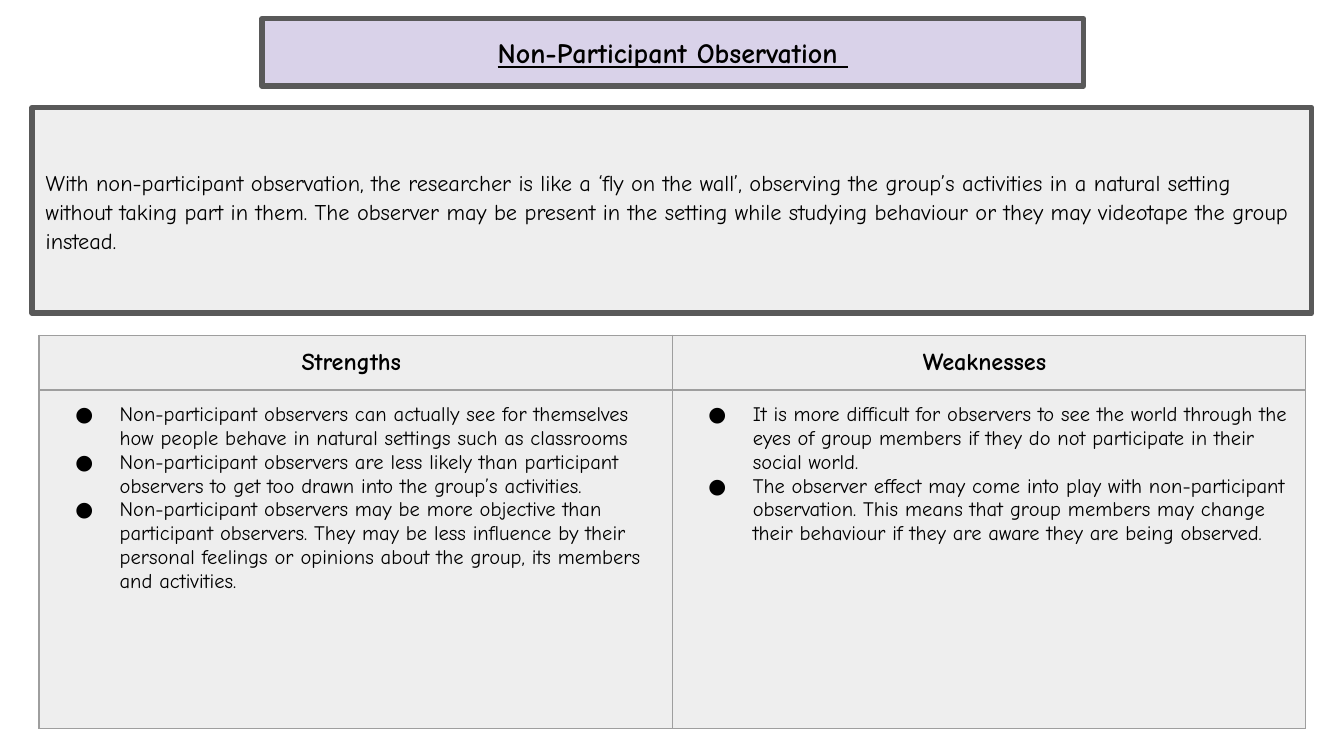
from dataclasses import dataclass

from lxml.etree import SubElement
from pptx import Presentation
from pptx.dml.color import RGBColor
from pptx.enum.text import MSO_ANCHOR, MSO_AUTO_SIZE, PP_ALIGN
from pptx.oxml.ns import qn
from pptx.util import Pt


@dataclass(frozen=True)
class Theme:
    font: str = "Comic Neue"
    ink: str = "000000"
    lilac: str = "D9D2E9"
    pale: str = "EEEEEE"
    frame: str = "595959"
    rule: str = "9E9E9E"
    title: float = 15
    body: float = 12
    head: float = 13
    item: float = 11


THEME = Theme()
INSET = Pt(7.2)
TITLE = "Non-Participant Observation "
BODY = (
    "With non-participant observation, the researcher is like a ‘fly on the wall’, "
    "observing the group’s activities in a natural setting without taking part in them. "
    "The observer may be present in the setting while studying behaviour or they may "
    "videotape the group instead."
)
POINTS = {
    "Strengths ": [
        "Non-participant observers can actually see for themselves how people behave "
        "in natural settings such as classrooms",
        "Non-participant observers are less likely than participant observers to get "
        "too drawn into the group’s activities.",
        "Non-participant observers may be more objective than participant observers. "
        "They may be less influence by their personal feelings or opinions about the "
        "group, its members and activities.",
    ],
    "Weaknesses ": [
        "It is more difficult for observers to see the world through the eyes of group "
        "members if they do not participate in their social world.",
        "The observer effect may come into play with non-participant observation. This "
        "means that group members may change their behaviour if they are aware they are "
        "being observed.",
    ],
}


def apply(target, values):
    for name, value in values.items():
        setattr(target, name, value)


def paint(fill, color):
    fill.solid()
    fill.fore_color.rgb = RGBColor.from_string(color)


def write(para, text, size, bold=False, under=False, **layout):
    apply(para, {"space_before": Pt(0), **layout})
    run = para.add_run()
    run.text = text
    apply(run.font, {"name": THEME.font, "size": Pt(size), "bold": bold, "underline": under})
    run.font.color.rgb = RGBColor.from_string(THEME.ink)


def mark(para, char=None, left=0, hang=0):
    props = para._p.get_or_add_pPr()
    props.set("marL", str(Pt(left)))
    props.set("indent", str(Pt(-hang)))
    if char is None:
        SubElement(props, qn("a:buNone"))
        return
    color = SubElement(props, qn("a:buClr"))
    SubElement(color, qn("a:srgbClr"), val=THEME.ink)
    SubElement(props, qn("a:buFont"), typeface=THEME.font)
    SubElement(props, qn("a:buChar"), char=char)


def panel(shape, box, color):
    apply(shape, dict(zip(("left", "top", "width", "height"), map(Pt, box))))
    paint(shape.fill, color)
    paint(shape.line.fill, THEME.frame)
    shape.line.width = Pt(3)
    SubElement(shape.line._get_or_add_ln(), qn("a:round"))
    frame = shape.text_frame
    apply(frame, {
        "word_wrap": True,
        "auto_size": MSO_AUTO_SIZE.NONE,
        "vertical_anchor": MSO_ANCHOR.MIDDLE,
        "margin_left": INSET,
        "margin_right": INSET,
        "margin_top": INSET,
        "margin_bottom": INSET,
    })
    return frame.paragraphs[0]


def dress(cell):
    apply(cell, {
        "margin_left": INSET,
        "margin_right": INSET,
        "margin_top": INSET,
        "margin_bottom": INSET,
    })
    props = cell._tc.get_or_add_tcPr()
    for side in ("lnL", "lnR", "lnT", "lnB"):
        edge = SubElement(props, qn(f"a:{side}"), w=str(Pt(0.75)))
        fill = SubElement(edge, qn("a:solidFill"))
        SubElement(fill, qn("a:srgbClr"), val=THEME.rule)
    paint(cell.fill, THEME.pale)


def bullets(frame, items):
    for i, text in enumerate(items):
        para = frame.add_paragraph() if i else frame.paragraphs[0]
        write(para, text, THEME.item)
        mark(para, "●", 36, 23.75)


def grid(slide, points):
    table = slide.shapes.add_table(
        2, len(points), Pt(20.9), Pt(179.6), Pt(678.4), Pt(210.2)
    ).table
    apply(table, {"first_row": False, "horz_banding": False})
    for row, height in zip(table.rows, (29, 181.2)):
        row.height = Pt(height)
    for col, (head, items) in enumerate(points.items()):
        top, low = table.cell(0, col), table.cell(1, col)
        dress(top)
        dress(low)
        write(top.text_frame.paragraphs[0], head, THEME.head, bold=True,
              alignment=PP_ALIGN.CENTER)
        bullets(low.text_frame, items)


def main():
    deck = Presentation()
    apply(deck, {"slide_width": Pt(720), "slide_height": Pt(405)})
    slide = deck.slides.add_slide(deck.slide_layouts[1])
    title, body = slide.placeholders
    para = panel(title, (140.4, 10, 440, 36), THEME.lilac)
    write(para, TITLE, THEME.title, bold=True, under=True, alignment=PP_ALIGN.CENTER)
    para = panel(body, (17.3, 57.6, 685.4, 110.2), THEME.pale)
    write(para, BODY, THEME.body, alignment=PP_ALIGN.LEFT, line_spacing=1.08,
          space_after=Pt(8))
    mark(para)
    grid(slide, POINTS)
    deck.save("out.pptx")


if __name__ == "__main__":
    main()
